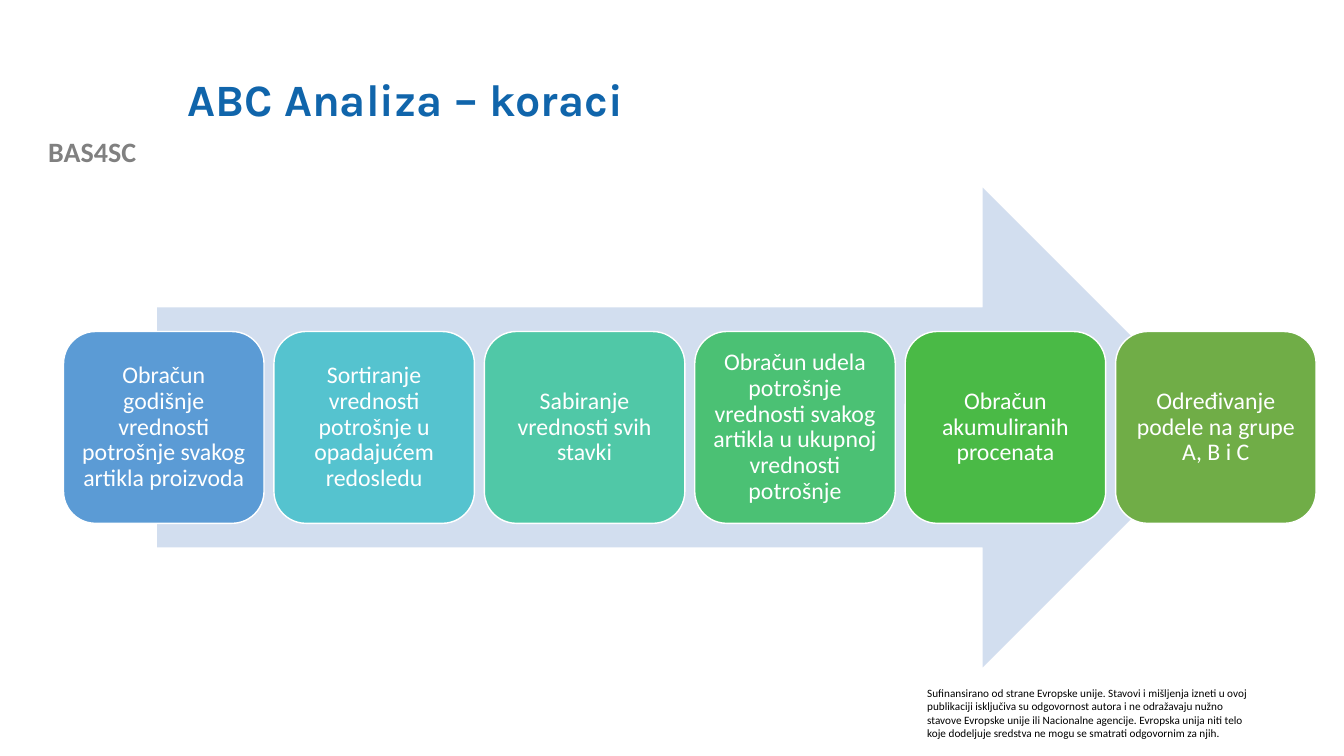
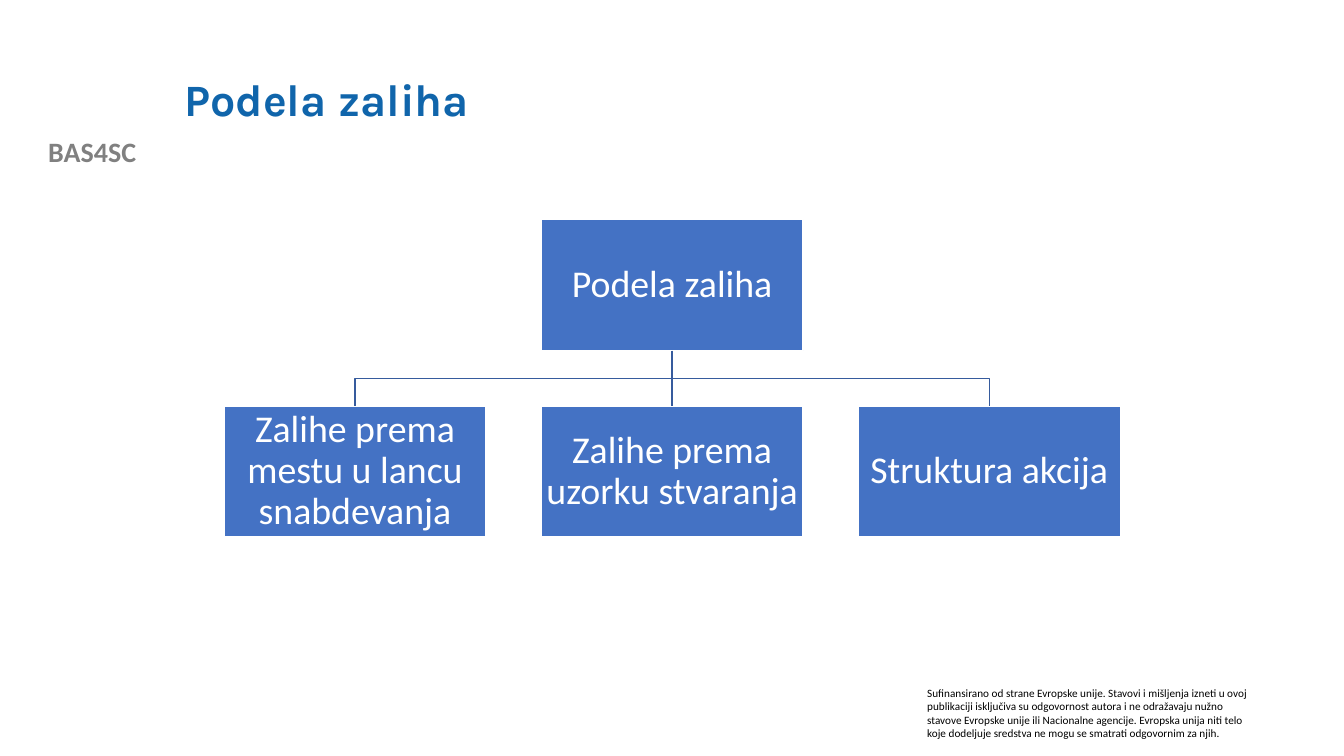
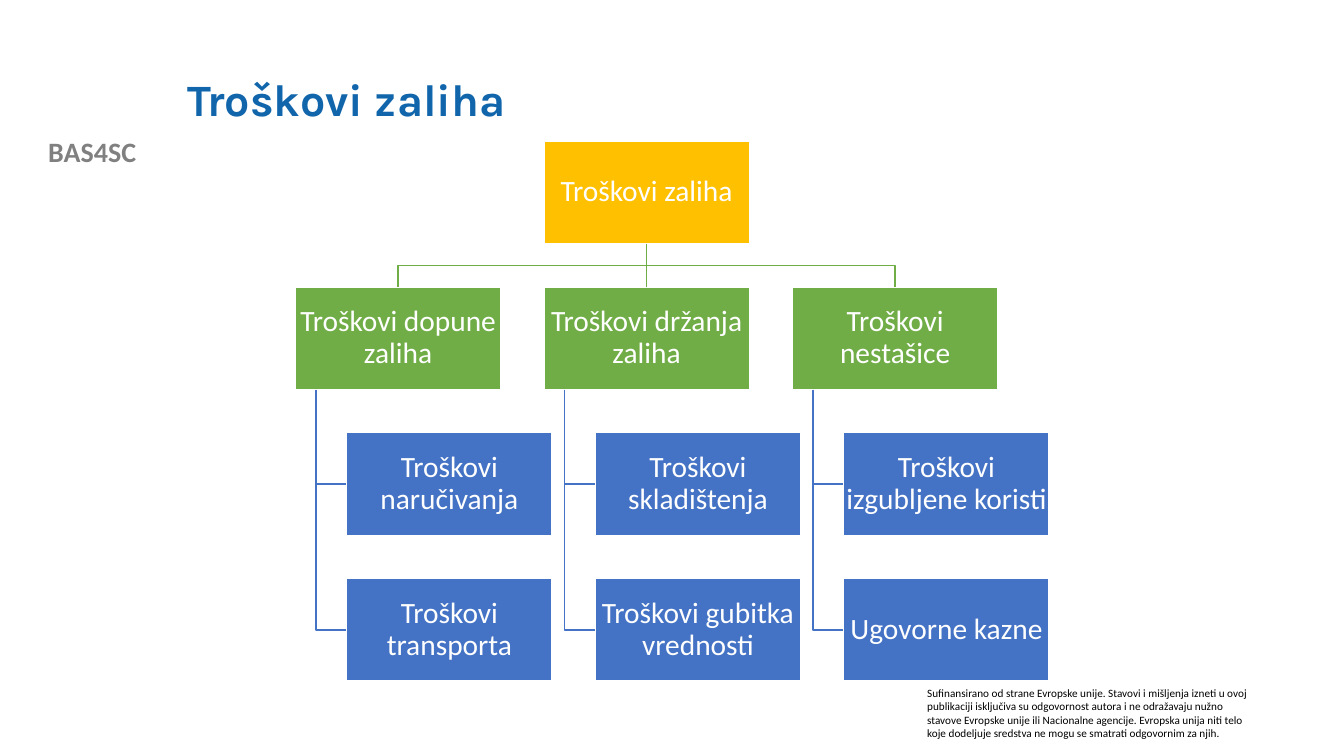
from pptx import Presentation
from pptx.dml.color import RGBColor
from pptx.enum.shapes import MSO_CONNECTOR, MSO_SHAPE
from pptx.enum.text import MSO_ANCHOR, PP_ALIGN
from pptx.oxml.ns import qn
from pptx.util import Pt
from lxml.etree import SubElement

# Colours
WHITE = RGBColor(0xFF, 0xFF, 0xFF)
BLACK = RGBColor(0x00, 0x00, 0x00)
GRAY = RGBColor(0x80, 0x80, 0x80)
TITLE_BLUE = RGBColor(0x10, 0x65, 0xAB)
BLUE = RGBColor(0x44, 0x72, 0xC4)
DARK_BLUE = RGBColor(0x36, 0x5B, 0x9D)
GREEN = RGBColor(0x70, 0xAD, 0x47)
GOLD = RGBColor(0xFF, 0xC0, 0x00)
PALE_BLUE = RGBColor(0xD2, 0xDE, 0xEF)
SKY = RGBColor(0x5B, 0x9B, 0xD5)
CYAN = RGBColor(0x55, 0xC3, 0xCF)
TEAL = RGBColor(0x50, 0xC8, 0xA7)
MINT = RGBColor(0x4B, 0xC1, 0x74)
LEAF_GREEN = RGBColor(0x4A, 0xBA, 0x46)

BODY_FONT = "Calibri"
TITLE_FONT = "Karla"

# Proportions of a tree, as shares of the box width
COLUMN_STEP = 1.21
LEVEL_STEP = 0.71
BOX_HEIGHT = 0.5
LEAF_INDENT = 0.25
STEM_OFFSET = 0.1

FUNDING_NOTE = (
    "Sufinansirano od strane Evropske unije. Stavovi i mišljenja izneti u ovoj "
    "publikaciji isključiva su odgovornost autora i ne odražavaju nužno stavove "
    "Evropske unije ili Nacionalne agencije. Evropska unija niti telo koje dodeljuje "
    "sredstva ne mogu se smatrati odgovornim za njih."
)

STEPS = [
    ("Obračun godišnje vrednosti potrošnje svakog artikla proizvoda", SKY),
    ("Sortiranje vrednosti potrošnje u opadajućem redosledu", CYAN),
    ("Sabiranje vrednosti svih stavki", TEAL),
    ("Obračun udela potrošnje vrednosti svakog artikla u ukupnoj vrednosti potrošnje", MINT),
    ("Obračun akumuliranih procenata", LEAF_GREEN),
    ("Određivanje podele na grupe A, B i C", GREEN),
]

STOCK_TYPES = [
    ("Zalihe prema mestu u lancu snabdevanja", []),
    ("Zalihe prema uzorku stvaranja", []),
    ("Struktura akcija", []),
]

STOCK_COSTS = [
    ("Troškovi dopune zaliha", ["Troškovi naručivanja", "Troškovi transporta"]),
    ("Troškovi držanja zaliha", ["Troškovi skladištenja", "Troškovi gubitka vrednosti"]),
    ("Troškovi nestašice", ["Troškovi izgubljene koristi", "Ugovorne kazne"]),
]


def write(frame, text, size, color, font=BODY_FONT, bold=False,
          align=PP_ALIGN.LEFT, spacing=1.0):
    frame.word_wrap = True
    paragraph = frame.paragraphs[0]
    paragraph.alignment = align
    paragraph.line_spacing = spacing
    run = paragraph.add_run()
    run.text = text
    run.font.size = Pt(size)
    run.font.name = font
    run.font.bold = bold
    run.font.color.rgb = color


def add_label(slide, left, top, width, height, text, size, color,
              anchor=MSO_ANCHOR.TOP, **style):
    frame = slide.shapes.add_textbox(Pt(left), Pt(top), Pt(width), Pt(height)).text_frame
    frame.vertical_anchor = anchor
    write(frame, text, size, color, **style)


def add_card(slide, preset, left, top, width, height, fill, text, size, inset):
    card = slide.shapes.add_shape(preset, Pt(left), Pt(top), Pt(width), Pt(height))
    card.shadow.inherit = False
    card.fill.solid()
    card.fill.fore_color.rgb = fill
    card.line.color.rgb = WHITE
    card.line.width = Pt(1)
    frame = card.text_frame
    frame.margin_left = frame.margin_right = Pt(inset)
    frame.margin_top = frame.margin_bottom = Pt(inset)
    frame.vertical_anchor = MSO_ANCHOR.MIDDLE
    write(frame, text, size, WHITE, align=PP_ALIGN.CENTER, spacing=0.9)
    return card


def add_elbow(slide, points, color):
    start, *corners = [(Pt(x), Pt(y)) for x, y in points]
    builder = slide.shapes.build_freeform(*start)
    builder.add_line_segments(corners, close=False)
    elbow = builder.convert_to_shape()
    elbow.shadow.inherit = False
    elbow.fill.background()
    elbow.line.color.rgb = color
    elbow.line.width = Pt(1)


def add_drop(slide, parent, child, color):
    drop = slide.shapes.add_connector(MSO_CONNECTOR.STRAIGHT, 0, 0, 0, 0)
    drop.begin_connect(parent, 2)
    drop.end_connect(child, 0)
    drop.line.color.rgb = color
    drop.line.width = Pt(1)
    SubElement(drop._element.spPr, qn("a:effectLst"))


def add_tree(slide, left, top, box_width, size, inset, root_text, branches,
             root_fill, branch_fill, branch_line):
    """Root above the middle branch; leaves hang below each branch."""
    box_height = box_width * BOX_HEIGHT
    level_step = box_width * LEVEL_STEP
    column_step = box_width * COLUMN_STEP

    def add_box(x, level, fill, text):
        return add_card(slide, MSO_SHAPE.RECTANGLE, x, top + level * level_step,
                        box_width, box_height, fill, text, size, inset)

    middle = len(branches) // 2
    root_left = left + middle * column_step
    root_center = root_left + box_width / 2
    root_bottom = top + box_height
    branch_top = top + level_step
    bus = (root_bottom + branch_top) / 2
    root = add_box(root_left, 0, root_fill, root_text)

    for column, (branch_text, leaves) in enumerate(branches):
        branch_left = left + column * column_step
        branch_center = branch_left + box_width / 2
        branch = add_box(branch_left, 1, branch_fill, branch_text)
        if column == middle:
            add_drop(slide, root, branch, branch_line)
        else:
            add_elbow(slide, [(root_center, root_bottom), (root_center, bus),
                              (branch_center, bus), (branch_center, branch_top)], branch_line)

        # Leaves and their stem
        stem = branch_left + box_width * STEM_OFFSET
        leaf_left = branch_left + box_width * LEAF_INDENT
        for level, leaf_text in enumerate(leaves, start=2):
            leaf_middle = top + level * level_step + box_height / 2
            add_elbow(slide, [(stem, branch_top + box_height), (stem, leaf_middle),
                              (leaf_left, leaf_middle)], BLUE)
            add_box(leaf_left, level, BLUE, leaf_text)


def add_base_slide(deck, title, title_left=126.7):
    slide = deck.slides.add_slide(deck.slide_layouts[6])
    add_label(slide, 0, 92.2, 131.8, 31.7, "BAS4SC", 20, GRAY,
              bold=True, align=PP_ALIGN.CENTER)
    add_label(slide, 655.2, 486.7, 249.8, 46, FUNDING_NOTE, 8, BLACK)
    add_label(slide, title_left, 28.8, 767.5, 87.8, title, 32, TITLE_BLUE,
              anchor=MSO_ANCHOR.MIDDLE, font=TITLE_FONT, bold=True, spacing=0.9)
    return slide


def add_steps_slide(deck):
    slide = add_base_slide(deck, "ABC Analiza – koraci")
    arrow = slide.shapes.add_shape(MSO_SHAPE.RIGHT_ARROW, Pt(112.3), Pt(134), Pt(761), Pt(342.7))
    arrow.shadow.inherit = False
    arrow.fill.solid()
    arrow.fill.fore_color.rgb = PALE_BLUE
    arrow.line.fill.background()
    for index, (text, fill) in enumerate(STEPS):
        add_card(slide, MSO_SHAPE.ROUNDED_RECTANGLE, 45.4 + index * 150.3, 236.8,
                 143.2, 137, fill, text, 17, 5)


def main():
    deck = Presentation()
    deck.slide_width, deck.slide_height = Pt(960), Pt(540)

    add_steps_slide(deck)

    types_slide = add_base_slide(deck, "Podela zaliha", 124.6)
    add_tree(types_slide, 160, 157, 187.2, 27, 1.4, "Podela zaliha", STOCK_TYPES,
             BLUE, BLUE, DARK_BLUE)

    costs_slide = add_base_slide(deck, "Troškovi zaliha")
    add_tree(costs_slide, 211, 100.8, 146.7, 21, 0.9, "Troškovi zaliha", STOCK_COSTS,
             GOLD, GREEN, GREEN)

    deck.save("out.pptx")


if __name__ == "__main__":
    main()
